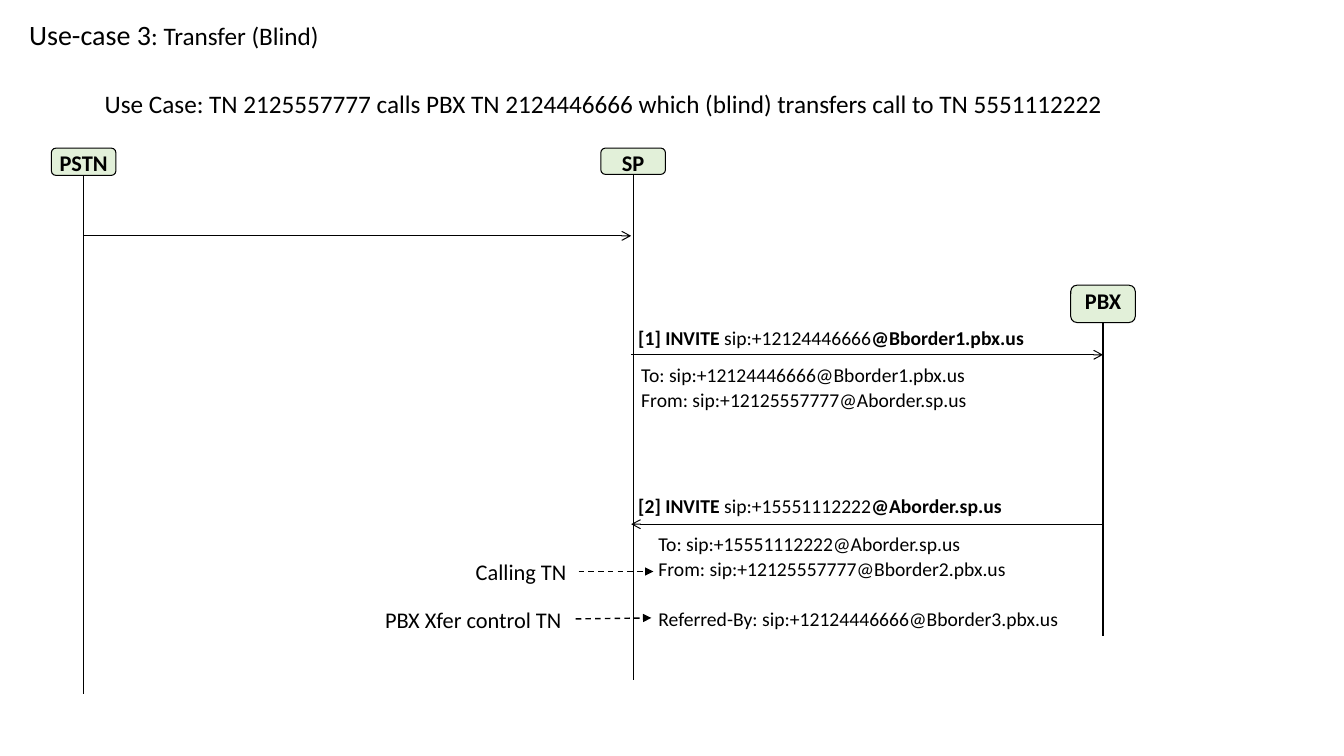
from lxml import etree
from pptx import Presentation
from pptx.dml.color import RGBColor
from pptx.enum import dml, shapes, text
from pptx.oxml import ns
from pptx.util import Inches, Pt

COLORS = {"ink": "000000", "actor": "E2F0D9"}
FONT = "Calibri"
PSTN_X, SP_X, PBX_X = 0.83, 6.28, 10.94
ACTOR_W = 0.64
LINE_SPACING = 0.9
HEADER_GAP, INVITE_GAP, BLOCK_GAP = 2.7, 8, 20.8


def rgb(name):
    return RGBColor.from_string(COLORS[name])


def add_runs(p, runs):
    for content, size, bold in runs:
        r = p.add_run()
        r.text = content
        for name, value in {"name": FONT, "size": Pt(size), "bold": bold}.items():
            setattr(r.font, name, value)
        r.font.color.rgb = rgb("ink")


def set_frame(tf, wrap, inset_x, inset_y, anchor=text.MSO_ANCHOR.TOP):
    formats = {
        "word_wrap": wrap,
        "vertical_anchor": anchor,
        "margin_left": Inches(inset_x),
        "margin_right": Inches(inset_x),
        "margin_top": Inches(inset_y),
        "margin_bottom": Inches(inset_y),
    }
    for name, value in formats.items():
        setattr(tf, name, value)


def add_text(s, box, paragraphs, wrap=False, inset=(0.1, 0.05),
             anchor=text.MSO_ANCHOR.TOP, spacing=None):
    tf = s.shapes.add_textbox(*map(Inches, box)).text_frame
    set_frame(tf, wrap, *inset, anchor)
    for i, (runs, gap) in enumerate(paragraphs):
        p = tf.add_paragraph() if i else tf.paragraphs[0]
        p.space_before = Pt(gap)
        if spacing:
            p.line_spacing = spacing
        add_runs(p, runs)


def add_label(s, box, content, size):
    add_text(s, box, [([(content, size, False)], 0)])


def add_invite(s, top, width, number, target, host):
    runs = [(f"[{number}] INVITE ", 14, True), (target, 14, False), (host, 14, True)]
    add_text(s, (6.2, top, width, 0.35), [(runs, INVITE_GAP)], True, (0.13, 0.07),
             spacing=LINE_SPACING)


def add_headers(s, box, headers):
    paragraphs = [([(content, 14, False)], gap) for content, gap in headers]
    add_text(s, box, paragraphs, True, (0.13, 0.01), spacing=LINE_SPACING)


def add_line(s, start, end, head=None, width=0.75, dash=None):
    line = s.shapes.add_connector(
        shapes.MSO_CONNECTOR.STRAIGHT, *map(Inches, start + end))
    line.line.color.rgb = rgb("ink")
    line.line.width = Pt(width)
    if dash:
        line.line.dash_style = dash
    if head:
        ln = line.line._get_or_add_ln()
        etree.SubElement(ln, ns.qn("a:tailEnd"), type=head)
    etree.SubElement(line._element.spPr, ns.qn("a:effectLst"))
    return line


def add_actor(s, name, x, top, height, bottom):
    box = (x - ACTOR_W / 2, top, ACTOR_W, height)
    sp = s.shapes.add_shape(shapes.MSO_SHAPE.ROUNDED_RECTANGLE, *map(Inches, box))
    sp.shadow.inherit = False
    sp.fill.solid()
    sp.fill.fore_color.rgb = rgb("actor")
    sp.line.color.rgb = rgb("ink")
    sp.line.width = Pt(0.75)
    set_frame(sp.text_frame, False, 0, 0)
    p = sp.text_frame.paragraphs[0]
    p.alignment = text.PP_ALIGN.CENTER
    add_runs(p, [(name, 16, True)])
    add_line(s, (x, top + height), (x, bottom)).begin_connect(sp, 2)


def main():
    prs = Presentation()
    prs.slide_width, prs.slide_height = Inches(13.33), Inches(7.5)
    s = prs.slides.add_slide(prs.slide_layouts[6])

    title = [("Use-case 3", 20, False), (": Transfer (Blind)", 18, False)]
    add_text(s, (0.19, 0, 12.86, 0.73), [(title, 0)], True,
             anchor=text.MSO_ANCHOR.MIDDLE, spacing=LINE_SPACING)
    add_label(s, (0.94, 0.83, 10.22, 0.4),
              "Use Case: TN 2125557777 calls PBX TN 2124446666 "
              "which (blind) transfers call to TN 5551112222", 18)

    for actor in [("PSTN", PSTN_X, 1.47, 0.27, 6.89),
                  ("SP", SP_X, 1.47, 0.26, 6.75),
                  ("PBX", PBX_X, 2.83, 0.37, 6.31)]:
        add_actor(s, *actor)

    for x1, x2, y in [(PSTN_X, 6.26, 2.34), (6.26, PBX_X, 3.52), (PBX_X, 6.26, 5.2)]:
        add_line(s, (x1, y), (x2, y), "arrow")

    add_invite(s, 3.19, 4.59, 1, "sip:+12124446666", "@Bborder1.pbx.us")
    add_headers(s, (6.23, 3.62, 3.99, 0.49), [
        ("To: sip:+12124446666@Bborder1.pbx.us", HEADER_GAP),
        ("From: sip:+12125557777@Aborder.sp.us", HEADER_GAP)])

    add_invite(s, 4.86, 4.22, 2, "sip:+15551112222", "@Aborder.sp.us")
    add_headers(s, (6.4, 5.29, 4.65, 1.26), [
        ("To: sip:+15551112222@Aborder.sp.us", HEADER_GAP),
        ("From: sip:+12125557777@Bborder2.pbx.us", HEADER_GAP),
        ("Referred-By: sip:+12124446666@Bborder3.pbx.us", BLOCK_GAP)])

    for content, left, top, width, start, end in [
            ("Calling TN", 4.62, 5.49, 1.11, (5.74, 5.67), (6.48, 5.67)),
            ("PBX Xfer control TN", 3.72, 5.96, 1.99, (5.71, 6.14), (6.46, 6.13))]:
        add_label(s, (left, top, width, 0.37), content, 16)
        add_line(s, start, end, "triangle", 1, dml.MSO_LINE.DASH)

    prs.save("out.pptx")


if __name__ == "__main__":
    main()
